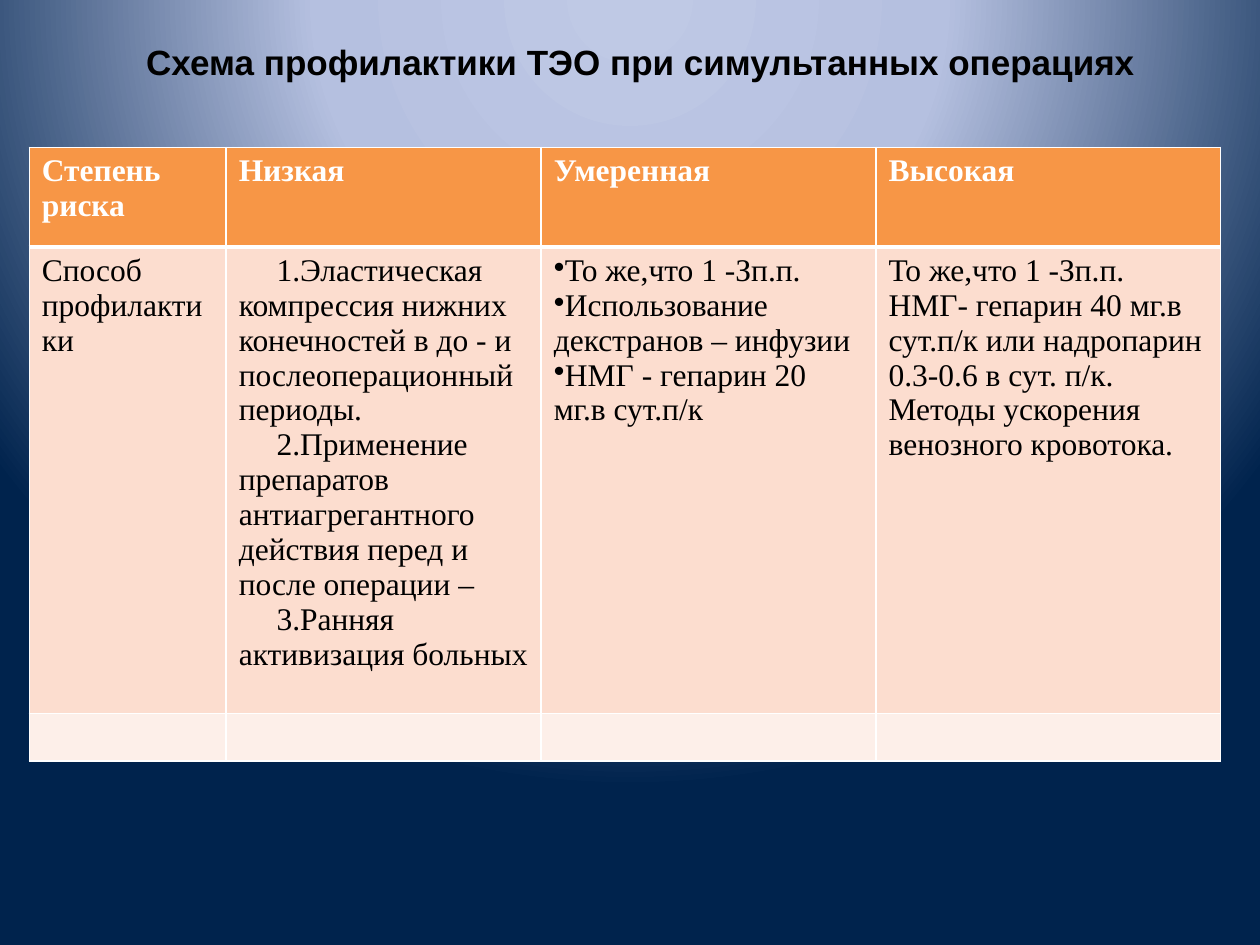
import pptx
import pptx.util
import pptx.dml.color
import pptx.enum.text
import pptx.oxml
import pptx.oxml.ns
from lxml import etree

Cm = pptx.util.Cm
Pt = pptx.util.Pt
RGBColor = pptx.dml.color.RGBColor
qn = pptx.oxml.ns.qn

BLACK = RGBColor(0x00, 0x00, 0x00)
WHITE = RGBColor(0xFF, 0xFF, 0xFF)
ORANGE = RGBColor(0xF7, 0x96, 0x46)
PEACH = RGBColor(0xFC, 0xDD, 0xCF)
PALE_PEACH = RGBColor(0xFD, 0xEF, 0xE9)
BACKGROUND_STOPS = [(0, "BFC9E5"), (40, "B5C0E0"), (100, "00234D")]

# Content: each cell is a list of paragraphs
TITLE = "Схема профилактики ТЭО при симультанных операциях"
RISK_LEVELS = [["Степень риска"], ["Низкая"], ["Умеренная"], ["Высокая"]]
METHODS = [
    ["Способ профилактики"],
    ["Эластическая компрессия нижних конечностей в до - и послеоперационный периоды.",
     "Применение препаратов антиагрегантного действия перед и после операции –",
     "Ранняя активизация больных"],
    ["То же,что 1 -Зп.п.",
     "Использование декстранов – инфузии",
     "НМГ - гепарин 20 мг.в сут.п/к"],
    ["То же,что 1 -Зп.п.",
     "НМГ- гепарин 40 мг.в сут.п/к или надропарин 0.3-0.6 в сут. п/к.",
     "Методы ускорения венозного кровотока."],
]
# Rows: height in cm, fill, text colour, bold, cells
ROWS = [
    (2.01, ORANGE, WHITE, True, RISK_LEVELS),
    (9.4, PEACH, BLACK, False, METHODS),
    (0.96, PALE_PEACH, BLACK, False, [[], [], [], []]),
]
COLUMN_WIDTHS = [3.97, 6.35, 6.75, 6.94]
# Lists by (row, column): bullet tag, its attribute and value, first-line indent
LISTS = {
    (1, 1): ("a:buAutoNum", "type", "arabicPeriod", Cm(0.76)),
    (1, 2): ("a:buChar", "char", "•", 0),
}


def add_run(paragraph, text, font_name, size, color, bold):
    run = paragraph.add_run()
    run.text = text
    run.font.name = font_name
    run.font.size = Pt(size)
    run.font.color.rgb = color
    run.font.bold = bold


def set_bullet(paragraph, tag, attribute, value, indent):
    properties = paragraph._p.get_or_add_pPr()
    properties.set("marL", "0")
    properties.set("indent", str(int(indent)))
    etree.SubElement(properties, qn(tag)).set(attribute, value)


def set_borders(cell, widths):
    properties = cell._tc.get_or_add_tcPr()
    for position, (side, width) in enumerate(widths.items()):
        line = etree.Element(qn("a:ln" + side), w=str(int(Pt(width))))
        solid = etree.SubElement(line, qn("a:solidFill"))
        etree.SubElement(solid, qn("a:srgbClr"), val=str(WHITE))
        properties.insert(position, line)


def set_background(slide):
    slide.background.fill.gradient()
    gradient = slide.element.find(".//" + qn("a:gradFill"))
    for child in list(gradient):
        gradient.remove(child)
    stops = etree.SubElement(gradient, qn("a:gsLst"))
    for percent, color in BACKGROUND_STOPS:
        stop = etree.SubElement(stops, qn("a:gs"), pos=str(percent * 1000))
        etree.SubElement(stop, qn("a:srgbClr"), val=color)
    circle = etree.SubElement(gradient, qn("a:path"))
    circle.set("path", "circle")
    etree.SubElement(circle, qn("a:fillToRect"),
                     l="50000", t="-80000", r="50000", b="180000")


def add_title(slide):
    frame = slide.shapes.add_textbox(Cm(1.27), Cm(0.69), Cm(23.29), Cm(1.12)).text_frame
    frame.word_wrap = True
    frame.vertical_anchor = pptx.enum.text.MSO_ANCHOR.MIDDLE
    heading = frame.paragraphs[0]
    heading.alignment = pptx.enum.text.PP_ALIGN.CENTER
    add_run(heading, TITLE, "Arial", 20, BLACK, True)


def add_risk_table(slide):
    total_height = sum(row[0] for row in ROWS)
    table = slide.shapes.add_table(len(ROWS), len(COLUMN_WIDTHS), Cm(0.59), Cm(2.97),
                                   Cm(sum(COLUMN_WIDTHS)), Cm(total_height)).table
    for column, width in zip(table.columns, COLUMN_WIDTHS):
        column.width = Cm(width)
    for r, (height, fill, color, bold, cells) in enumerate(ROWS):
        table.rows[r].height = Cm(height)
        for c, paragraphs in enumerate(cells):
            cell = table.cell(r, c)
            cell.fill.solid()
            cell.fill.fore_color.rgb = fill
            # A thick rule separates the header from the body
            set_borders(cell, {"L": 1, "R": 1, "T": 3 if r == 1 else 1,
                               "B": 3 if r == 0 else 1})
            if not paragraphs:
                cell.margin_top = cell.margin_bottom = 0
            frame = cell.text_frame
            for i, text in enumerate(paragraphs):
                paragraph = frame.add_paragraph() if i else frame.paragraphs[0]
                if (r, c) in LISTS:
                    set_bullet(paragraph, *LISTS[r, c])
                add_run(paragraph, text, "Times New Roman", 18, color, bold)


def main():
    deck = pptx.Presentation()
    deck.slide_width, deck.slide_height = Cm(25.4), Cm(19.05)
    slide = deck.slides.add_slide(deck.slide_layouts[6])
    set_background(slide)
    add_title(slide)
    add_risk_table(slide)
    deck.save("out.pptx")


if __name__ == "__main__":
    main()
